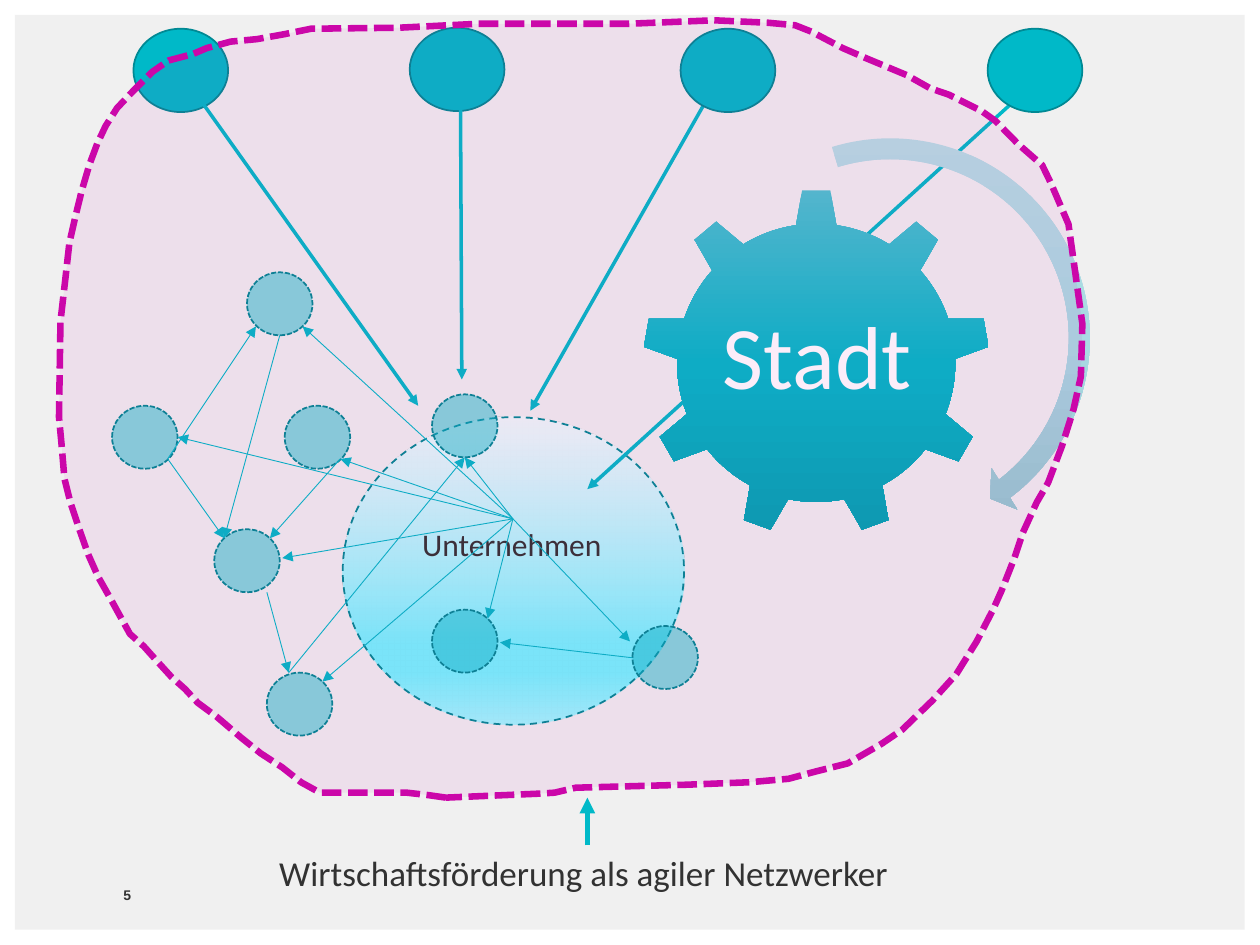
from lxml import etree
from pptx import Presentation, util as u
from pptx.dml.color import RGBColor
from pptx.enum import dml, shapes, text
from pptx.oxml.ns import qn

TEAL = RGBColor(0x00, 0xB9, 0xC8)
DARK_TEAL = RGBColor(0x00, 0x89, 0x94)
MAGENTA = RGBColor(0xCB, 0x07, 0xA9)
TINT = RGBColor(0xCD, 0x0A, 0xAA)
PANEL = RGBColor(0xF0, 0xF0, 0xF0)
INK = RGBColor(0x32, 0x32, 0x32)
WHITE = RGBColor(0xFF, 0xFF, 0xFF)

# Gradient stops: position, colour, opacity (all in percent)
COMPANY_STOPS = [(0, "F0FEFF", 70), (74, "74F5FF", 100),
                 (83, "74F5FF", 100), (100, "A2F8FF", 100)]
GEAR_STOPS = [(0, "4BC2D0", 100), (50, "00B9C8", 100), (100, "00A4B2", 100)]
TURN_STOPS = [(0, "B6DEE5", 100), (50, "A9DAE3", 100), (100, "92C5CD", 100)]

# Everything below is measured in centimetres
HUB = (10.34, 10.46)
NODES = [(4.98, 5.49), (12.75, 12.62), (4.32, 10.67), (5.38, 13.56),
         (8.71, 7.95), (8.71, 12.29), (2.26, 8.18), (5.74, 8.18)]
HUB_TARGETS = [(6.86, 9.25), (9.37, 9.22), (9.83, 12.47), (12.7, 12.93),
               (5.69, 11.25), (6.5, 13.74), (6.1, 6.58), (3.58, 8.81)]
NODE_LINKS = [((3.38, 9.25), (4.52, 10.85)), ((5.38, 11.94), (5.82, 13.56)),
              ((3.38, 9.25), (5.16, 6.58)), ((5.64, 6.76), (4.52, 10.85)),
              ((6.86, 9.25), (5.44, 10.85)), ((5.82, 13.56), (9.37, 9.22)),
              ((12.75, 13.26), (10.08, 12.95))]
ACTORS = [(2.69, 0.58), (8.26, 0.56), (13.72, 0.58), (19.91, 0.58)]
BACK_INPUTS = [((20.65, 1.85), (11.84, 9.86)), ((14.58, 1.42), (10.69, 8.28))]
FRONT_INPUTS = [((3.58, 1.37), (8.43, 8.18)), ((9.28, 1.42), (9.31, 7.65))]
NETWORK_EDGE = [
    (8.99, 16.08), (8.64, 16.03), (8.2, 15.98), (7.04, 15.98), (6.45, 15.98),
    (6.07, 15.77), (5.69, 15.47), (5.26, 15.19), (4.85, 14.86), (4.37, 14.45),
    (3.99, 14.17), (3.73, 13.89), (3.45, 13.64), (3.15, 13.31), (2.9, 13.03),
    (2.62, 12.78), (2.41, 12.4), (2.24, 12.09), (1.98, 11.63), (1.78, 11.18),
    (1.6, 10.67), (1.42, 10.13), (1.3, 9.65), (1.24, 8.94), (1.19, 8.41),
    (1.22, 6.48), (1.32, 5.61), (1.4, 4.9), (1.52, 4.37), (1.65, 3.84),
    (1.8, 3.33), (1.96, 2.9), (2.13, 2.54), (2.36, 2.18), (2.67, 1.85),
    (3.07, 1.45), (3.4, 1.22), (3.89, 1.09), (4.17, 0.97), (4.65, 0.84),
    (5.18, 0.79), (5.74, 0.69), (6.27, 0.58), (8.03, 0.56), (9.65, 0.48),
    (12.67, 0.48), (14.4, 0.41), (15.49, 0.46), (16.03, 0.51), (16.36, 0.64),
    (16.99, 0.97), (17.45, 1.17), (18.29, 1.52), (18.75, 1.78), (19.13, 1.91),
    (19.79, 2.24), (20.07, 2.44), (20.52, 2.9), (21.01, 3.33), (21.18, 3.68),
    (21.54, 4.52), (21.69, 5.59), (21.82, 6.53), (21.79, 7.59), (21.64, 8.26),
    (21.41, 8.99), (21.13, 9.73), (20.9, 10.13), (20.62, 10.74), (20.45, 11.25),
    (20.19, 11.91), (20.02, 12.29), (19.69, 12.93), (19.28, 13.59),
    (18.8, 14.12), (18.19, 14.71), (17.78, 14.99), (17.09, 15.39),
    (16.38, 15.57), (15.9, 15.7), (15.11, 15.77), (13.84, 15.82),
    (11.61, 15.88), (11.18, 15.98), (10.87, 16)]


def apply(target, values):
    for key, value in values.items():
        setattr(target, key, value)


def cm(*lengths):
    return [u.Cm(length) for length in lengths]


def add_alpha(color, percent):
    etree.SubElement(color, qn("a:alpha"), val=str(percent * 1000))


def fill_solid(shape, color, opacity=100):
    shape.fill.solid()
    shape.fill.fore_color.rgb = color
    if opacity < 100:
        add_alpha(shape.fill._xPr.find(qn("a:solidFill"))[0], opacity)


def fill_gradient(shape, stops):
    """Vertical gradient with any number of stops."""
    shape.fill.gradient()
    shape.fill.gradient_angle = 270
    stop_list = shape.fill._xPr.find(qn("a:gradFill")).find(qn("a:gsLst"))
    for old in list(stop_list):
        stop_list.remove(old)
    for position, color, opacity in stops:
        stop = etree.SubElement(stop_list, qn("a:gs"), pos=str(position * 1000))
        add_alpha(etree.SubElement(stop, qn("a:srgbClr"), val=color), opacity)


def outline(shape, color=None, width=1, dash=None):
    shape.shadow.inherit = False
    if color is None:
        shape.line.fill.background()
        return
    shape.line.color.rgb = color
    apply(shape.line, {"width": u.Pt(width), "dash_style": dash})


def add_preset(slide, kind, box):
    return slide.shapes.add_shape(kind, *cm(*box))


def add_circle(slide, box, opacity=100, dash=None):
    circle = add_preset(slide, shapes.MSO_SHAPE.OVAL, box)
    fill_solid(circle, TEAL, opacity)
    outline(circle, DARK_TEAL, dash=dash)
    return circle


def add_arrow(slide, start, end, width):
    arrow = slide.shapes.add_connector(
        shapes.MSO_CONNECTOR.STRAIGHT, *cm(*start, *end))
    arrow.line.color.rgb = TEAL
    arrow.line.width = u.Pt(width)
    etree.SubElement(arrow.line._get_or_add_ln(), qn("a:tailEnd"), type="triangle")
    etree.SubElement(arrow._element.spPr, qn("a:effectLst"))


def add_label(slide, box, wording, font, frame=None, paragraph=None):
    label = slide.shapes.add_textbox(*cm(*box)).text_frame
    apply(label, {"word_wrap": False, **(frame or {})})
    line = label.paragraphs[0]
    apply(line, paragraph or {})
    run = line.add_run()
    run.text = wording
    apply(run.font, {"name": "Calibri", **font})
    return run


def add_city(slide):
    gear = add_preset(slide, shapes.MSO_SHAPE.GEAR_9, (12.95, 3.81, 7.01, 7.01))
    fill_gradient(gear, GEAR_STOPS)
    outline(gear)
    margins = dict.fromkeys(
        ("margin_left", "margin_right", "margin_top", "margin_bottom"), u.Cm(0.18))
    city = add_label(slide, (14.38, 5.46, 4.19, 3.61), "Stadt", {"size": u.Pt(51)},
                     {**margins, "vertical_anchor": text.MSO_ANCHOR.MIDDLE},
                     {"alignment": text.PP_ALIGN.CENTER, "line_spacing": 0.9})
    city.font.color.rgb = WHITE
    turn = add_preset(slide, shapes.MSO_SHAPE.CIRCULAR_ARROW,
                      (13.64, 2.51, 8.61, 8.61))
    for index, value in enumerate((0.049, 3.126, 31.713, 151.827, 0.057)):
        turn.adjustments[index] = value
    fill_gradient(turn, TURN_STOPS)
    outline(turn)


def add_network_edge(slide):
    points = [cm(*point) for point in NETWORK_EDGE]
    builder = slide.shapes.build_freeform(*points[0])
    builder.add_line_segments(points[1:], close=True)
    edge = builder.convert_to_shape()
    fill_solid(edge, TINT, 7)
    outline(edge, MAGENTA, 3.75, dml.MSO_LINE.SQUARE_DOT)


def main():
    prs = Presentation()
    apply(prs, {"slide_width": u.Cm(25.4), "slide_height": u.Cm(19.05)})
    slide = prs.slides.add_slide(prs.slide_layouts[6])

    # Background panel and company area
    panel = add_preset(slide, shapes.MSO_SHAPE.RECTANGLE, (0.3, 0.3, 24.79, 18.44))
    fill_solid(panel, PANEL)
    outline(panel)
    company = add_circle(slide, (6.91, 8.41, 6.88, 6.2), dash=dml.MSO_LINE.DASH)
    fill_gradient(company, COMPANY_STOPS)

    # City gear in front of two inputs
    for start, end in BACK_INPUTS:
        add_arrow(slide, start, end, 2)
    add_city(slide)

    # Network nodes and their links
    for node in NODES:
        add_circle(slide, (*node, 1.32, 1.27), 45, dml.MSO_LINE.SQUARE_DOT)
    add_label(slide, (8.26, 10.46, 4.17, 1.02), "Unternehmen",
              {"size": u.Pt(18)}).font.color.rgb = INK
    for start, end in [(HUB, target) for target in HUB_TARGETS] + NODE_LINKS:
        add_arrow(slide, start, end, 0.5)

    # Outside actors and the remaining inputs
    for actor in ACTORS:
        add_circle(slide, (*actor, 1.91, 1.68))
    for start, end in FRONT_INPUTS:
        add_arrow(slide, start, end, 2)

    # Network boundary, caption and page number
    add_network_edge(slide)
    add_label(slide, (5.38, 17.04, 12.93, 1.12),
              "Wirtschaftsförderung als agiler Netzwerker",
              {"size": u.Pt(20)}).font.color.rgb = INK
    add_arrow(slide, (11.84, 17.04), (11.84, 16.08), 3)
    no_margins = dict.fromkeys(
        ("margin_left", "margin_right", "margin_top", "margin_bottom"), 0)
    add_label(slide, (2.49, 17.75, 0.61, 0.71), "5",
              {"name": "Arial", "size": u.Pt(8), "bold": True}, no_margins,
              {"line_spacing": u.Pt(13)}).font.color.rgb = INK

    prs.save("out.pptx")


if __name__ == "__main__":
    main()
